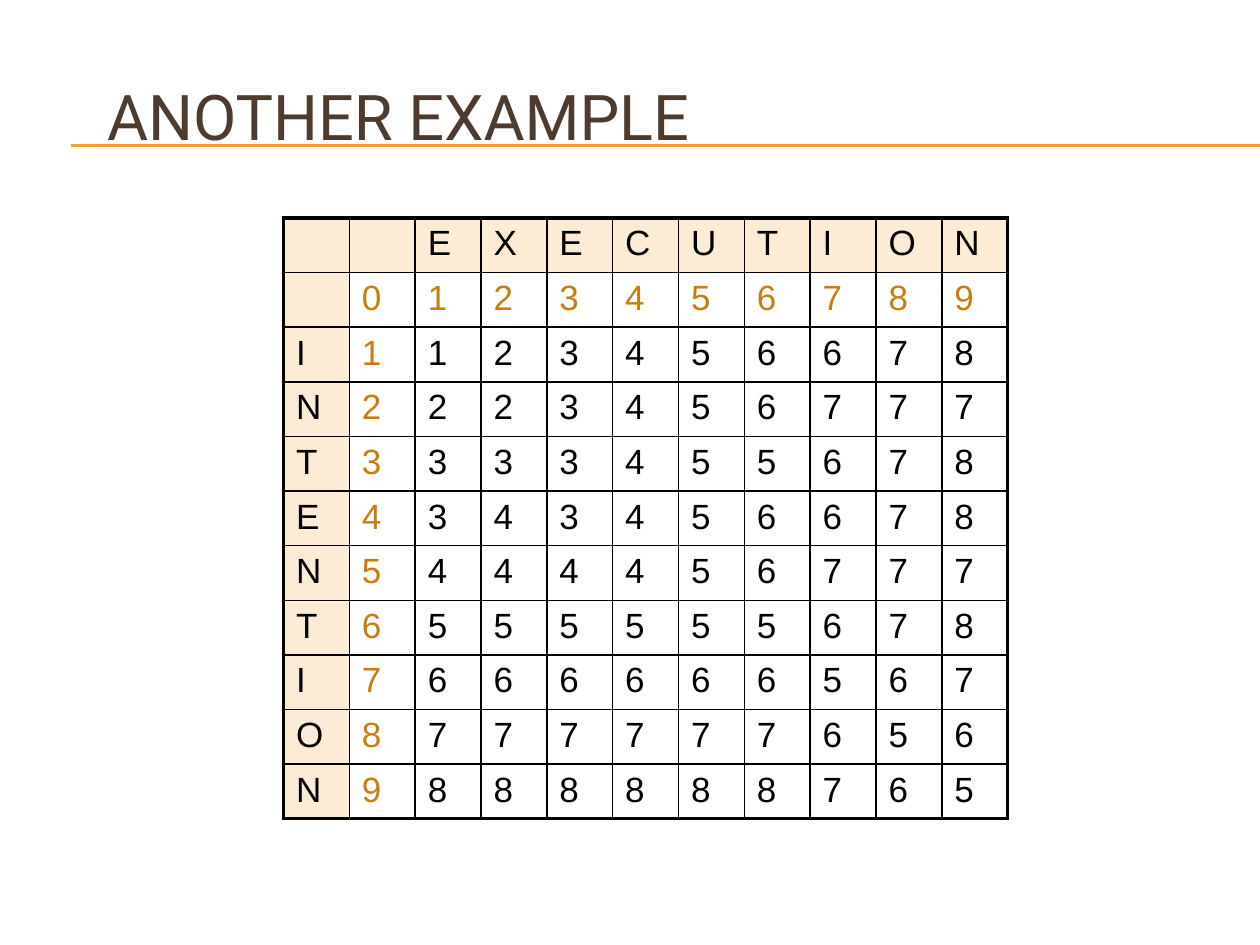
from lxml.etree import SubElement
from pptx import Presentation
from pptx.dml.color import RGBColor
from pptx.enum.shapes import MSO_CONNECTOR
from pptx.enum.text import MSO_ANCHOR, PP_ALIGN
from pptx.oxml.ns import qn
from pptx.util import Inches, Pt

BLACK = RGBColor(0x00, 0x00, 0x00)
BROWN = RGBColor(0x4E, 0x3B, 0x30)
AMBER = RGBColor(0xF0, 0xA2, 0x2E)
OCHRE = RGBColor(0xC8, 0x7D, 0x0E)
CREAM = RGBColor(0xFC, 0xEC, 0xD5)

# Edit distances: target letters across, source letters down
DISTANCES = [
    "  EXECUTION",
    " 0123456789",
    "I1123456678",
    "N2223456777",
    "T3333455678",
    "E4343456678",
    "N5444456777",
    "T6555555678",
    "I7666666567",
    "O8777777656",
    "N9888888765",
]


def set_text(tf, text, font="Arial", size=20, color=BLACK):
    p = tf.paragraphs[0]
    p.alignment = PP_ALIGN.LEFT
    r = p.add_run()
    r.text = text
    r.font.name = font
    r.font.size = Pt(size)
    r.font.bold = False
    r.font.color.rgb = color


def add_rule(slide, y):
    line = slide.shapes.add_connector(
        MSO_CONNECTOR.STRAIGHT, Inches(0.56), Inches(y), Inches(10), Inches(y))
    line.line.color.rgb = AMBER
    line.line.width = Pt(0.75)
    SubElement(line._element.spPr, qn("a:effectLst"))


def add_title(slide, text):
    title = slide.shapes.title
    title.left, title.top = Inches(0.75), Inches(0.5)
    title.width, title.height = Inches(8.5), Inches(0.83)
    title.text_frame.vertical_anchor = MSO_ANCHOR.MIDDLE
    set_text(title.text_frame, text, font="Roboto", size=36, color=BROWN)
    # Bring the title in front of the rules
    slide.shapes._spTree.append(title._element)


def set_borders(cell, widths):
    tcPr = cell._tc.get_or_add_tcPr()
    for side, width in zip("LRTB", widths):
        ln = SubElement(tcPr, qn(f"a:ln{side}"), w=str(Pt(width)))
        fill = SubElement(ln, qn("a:solidFill"))
        SubElement(fill, qn("a:srgbClr"), val=str(BLACK))


def add_grid(slide, rows):
    last = len(rows) - 1
    table = slide.shapes.add_table(
        len(rows), len(rows[0]),
        Inches(2.25), Inches(1.73), Inches(5.75), Inches(4.77)).table
    table.first_row = False
    table.horz_banding = False

    for i, row in enumerate(rows):
        for j, text in enumerate(row):
            cell = table.cell(i, j)
            # Heavy outer frame, thin inner lines
            edges = (j == 0, j == last, i == 0, i == last)
            set_borders(cell, [2.25 if edge else 1 for edge in edges])
            is_letter = i == 0 or j == 0
            if is_letter:
                cell.fill.solid()
                cell.fill.fore_color.rgb = CREAM
            else:
                cell.fill.background()
            if text != " ":
                is_base = not is_letter and (i == 1 or j == 1)
                set_text(cell.text_frame, text, color=OCHRE if is_base else BLACK)


def main():
    prs = Presentation()
    prs.slide_width, prs.slide_height = Inches(10), Inches(7.5)
    slide = prs.slides.add_slide(prs.slide_layouts[5])
    for y in (1.15, 1.16):
        add_rule(slide, y)
    add_title(slide, "ANOTHER EXAMPLE")
    add_grid(slide, DISTANCES)
    prs.save("out.pptx")


if __name__ == "__main__":
    main()
